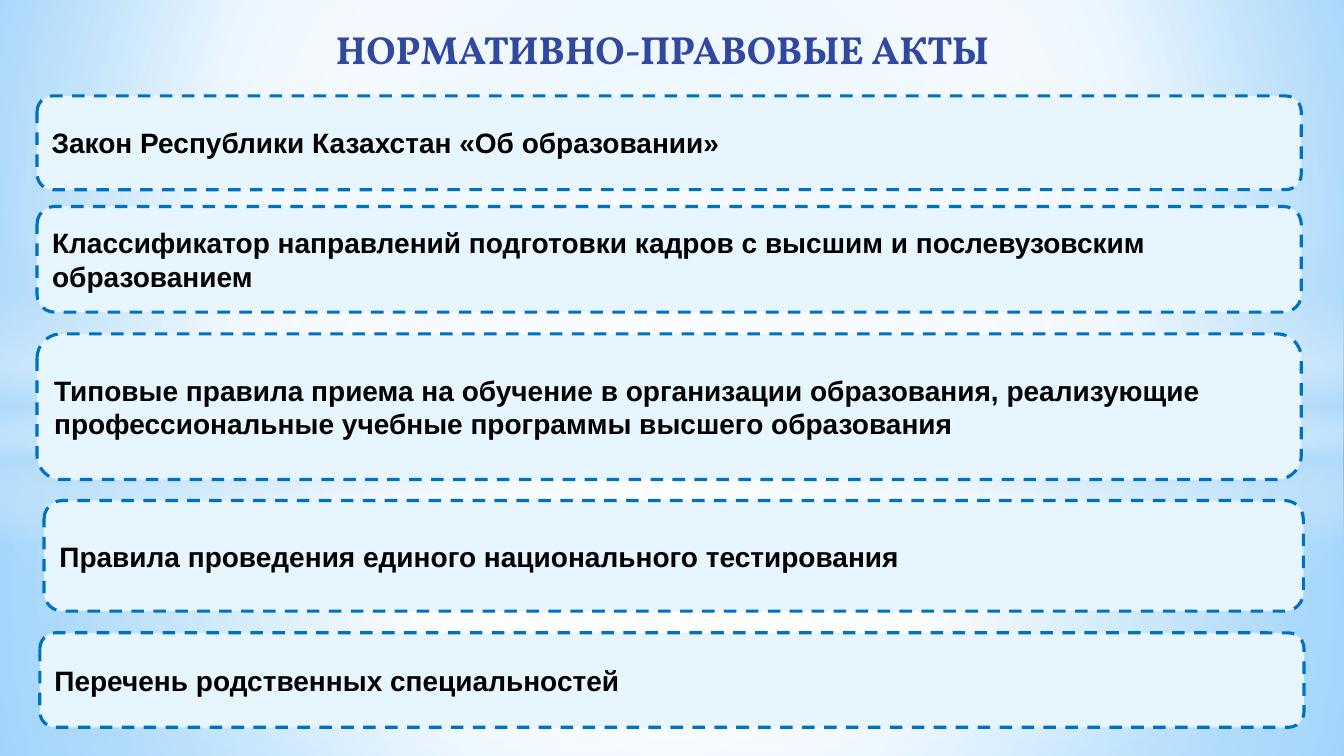
import pptx
import pptx.util
import pptx.dml.color
import pptx.enum.dml
import pptx.enum.shapes
import pptx.enum.text
import pptx.oxml
import pptx.oxml.ns
import lxml.etree

Pt = pptx.util.Pt
RGB = pptx.dml.color.RGBColor.from_string
Shapes = pptx.enum.shapes.MSO_SHAPE
Align = pptx.enum.text.PP_ALIGN
qn = pptx.oxml.ns.qn

theme = {
    "title": "31489F", "text": "000000", "card": "E7F5FF", "border": "0070C0",
    "white": "FFFFFF", "haze": "B4DCFA", "sky": "9ED5FF", "deep_sky": "5BB9FF",
    "title_font": "Vollkorn", "card_font": "Arial", "title_size": 28, "card_size": 20,
}


def set_gradient(properties, stops, focus):
    gradient = lxml.etree.Element(qn("a:gradFill"), rotWithShape="1")
    stop_list = lxml.etree.SubElement(gradient, qn("a:gsLst"))
    for position, color, opacity in stops:
        stop = lxml.etree.SubElement(stop_list, qn("a:gs"), pos=str(position * 1000))
        value = lxml.etree.SubElement(stop, qn("a:srgbClr"), val=theme[color])
        if opacity < 100:
            lxml.etree.SubElement(value, qn("a:alpha"), val=str(opacity * 1000))
    if focus:
        circle = lxml.etree.SubElement(gradient, qn("a:path"))
        circle.set("path", "circle")
        edges = {side: str(share * 1000) for side, share in zip("ltrb", focus)}
        lxml.etree.SubElement(circle, qn("a:fillToRect"), **edges)
    else:
        lxml.etree.SubElement(gradient, qn("a:lin"), ang="5400000", scaled="0")
    parsed = pptx.oxml.parse_xml(lxml.etree.tostring(gradient))
    properties.replace(properties.find(qn("a:solidFill")), parsed)


def add_text(frame, text, font_name, size, color, alignment):
    frame.word_wrap = True
    frame.vertical_anchor = pptx.enum.text.MSO_ANCHOR.MIDDLE
    paragraph = frame.paragraphs[0]
    paragraph.alignment = alignment
    run = paragraph.add_run()
    run.text = text
    run.font.name = theme[font_name]
    run.font.size = Pt(theme[size])
    run.font.bold = True
    run.font.color.rgb = RGB(theme[color])
    return paragraph


presentation = pptx.Presentation()
presentation.slide_width = Pt(960)
presentation.slide_height = Pt(540)
slide = presentation.slides.add_slide(presentation.slide_layouts[5])

slide.background.fill.solid()
set_gradient(
    slide.element.find(".//" + qn("p:bgPr")),
    [(0, "sky", 100), (60, "white", 100), (100, "deep_sky", 100)],
    (20, 10, 20, 60),
)

center = (50, 50, 50, 50)
haze_layers = [
    (Shapes.RECTANGLE, 304.5, 235.5, center,
     [(0, "white", 91), (37, "white", 76), (100, "haze", 79)]),
    (Shapes.RECTANGLE, 0, 304.5, center,
     [(0, "white", 89), (48, "white", 62), (100, "haze", 79)]),
    (Shapes.RECTANGLE, 209, 180, None,
     [(0, "white", 0), (29, "white", 30), (45, "haze", 40),
      (55, "white", 26), (65, "haze", 60), (100, "white", 0)]),
    (Shapes.OVAL, 126, 402, center, [(0, "white", 100), (54, "white", 0)]),
]
for kind, top, height, focus, stops in haze_layers:
    layer = slide.shapes.add_shape(kind, 0, Pt(top), Pt(960), Pt(height))
    layer.shadow.inherit = False
    layer.line.fill.background()
    layer.fill.solid()
    set_gradient(layer.element.spPr, stops, focus)

title = slide.shapes.title
title.left, title.top, title.width, title.height = Pt(119), Pt(1), Pt(708), Pt(67.5)
heading = add_text(title.text_frame, "НОРМАТИВНО-ПРАВОВЫЕ АКТЫ",
                   "title_font", "title_size", "title", Align.CENTER)
heading.space_after = Pt(3)
slide.shapes.element.append(title.element)

acts = [
    (26.5, 68.5, 903, 67, "Закон Республики Казахстан «Об образовании»"),
    (26.5, 147.5, 903, 75.5,
     "Классификатор направлений подготовки кадров с высшим и послевузовским образованием"),
    (26.5, 238.5, 903, 104,
     "Типовые правила приема на обучение в организации образования, реализующие "
     "профессиональные учебные программы высшего образования"),
    (31.5, 357.5, 899.5, 79, "Правила проведения единого национального тестирования"),
    (28.5, 452, 903, 67.5, "Перечень родственных специальностей"),
]
for left, top, width, height, text in acts:
    card = slide.shapes.add_shape(
        Shapes.ROUNDED_RECTANGLE, Pt(left), Pt(top), Pt(width), Pt(height))
    card.shadow.inherit = False
    card.fill.solid()
    card.fill.fore_color.rgb = RGB(theme["card"])
    card.line.color.rgb = RGB(theme["border"])
    card.line.width = Pt(2.25)
    card.line.dash_style = pptx.enum.dml.MSO_LINE.DASH
    add_text(card.text_frame, text, "card_font", "card_size", "text", Align.LEFT)

presentation.save("out.pptx")
